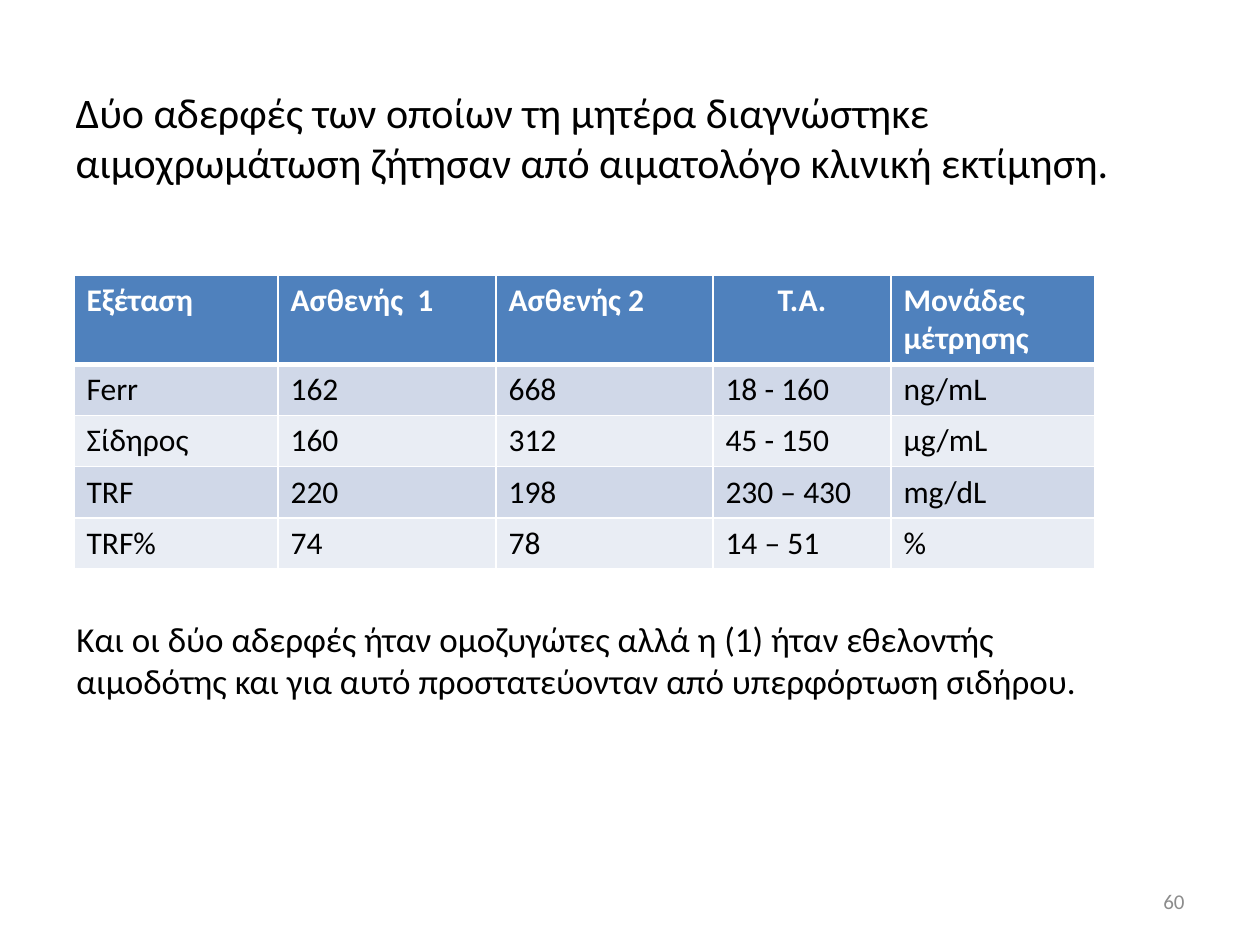
import pptx
import pptx.util
import pptx.dml.color
import pptx.enum.text
import pptx.oxml
import pptx.oxml.ns
from dataclasses import dataclass

TITLE = ("Δύο αδερφές των οποίων τη μητέρα διαγνώστηκε "
         "αιμοχρωμάτωση ζήτησαν από αιματολόγο κλινική εκτίμηση.")
LAB_RESULTS = [
    ("Εξέταση", "Ασθενής  1", "Ασθενής 2", "Τ.Α.", "Μονάδες μέτρησης"),
    ("Ferr", "162", "668", "18 - 160", "ng/mL"),
    ("Σίδηρος", "160", "312", "45 - 150", "μg/mL"),
    ("ΤRF", "220", "198", "230 – 430", "mg/dL"),
    ("TRF%", "74", "78", "14 – 51", "%"),
]
CONCLUSION = ("Και οι δύο αδερφές ήταν ομοζυγώτες αλλά η (1) ήταν εθελοντής "
              "αιμοδότης και για αυτό προστατεύονταν από υπερφόρτωση σιδήρου.")
PAGE_NUMBER = "60"

# Lengths in px
SLIDE_SIZE = (1260, 945)
TITLE_BOX = (63, 38, 1134, 197)
TABLE_ORIGIN = (74, 275)
COLUMN_WIDTHS = (204, 218, 217, 178, 204)
HEADER_HEIGHT, ROW_HEIGHT = 87, 51
CONCLUSION_BOX = (64, 611, 1071, 97)
NUMBER_BOX = (903, 876, 294, 50)
RANGE_COLUMN = 3


@dataclass(frozen=True)
class Theme:
    font: str = "Calibri"
    text: str = "000000"
    white: str = "FFFFFF"
    muted: str = "8C8C8C"
    header: str = "4F81BD"
    bands: tuple = ("D0D8E8", "E9EDF4")
    title_size: int = 24
    body_size: int = 20
    table_size: int = 18
    number_size: int = 12


THEME = Theme()
ALIGN = pptx.enum.text.PP_ALIGN
ANCHOR = pptx.enum.text.MSO_ANCHOR


def px(length):
    return pptx.util.Emu(round(length * 914400 / 126))


def color(value):
    return pptx.dml.color.RGBColor.from_string(value)


def write(frame, text, size, text_color, align=ALIGN.LEFT, bold=False):
    frame.text = text
    frame.word_wrap = True
    paragraph = frame.paragraphs[0]
    paragraph.alignment = align
    font = paragraph.font
    font.name, font.size, font.bold = THEME.font, pptx.util.Pt(size), bold
    font.color.rgb = color(text_color)


def add_text(slide, box, anchor, *style, **options):
    shape = slide.shapes.add_textbox(*map(px, box))
    write(shape.text_frame, *style, **options)
    shape.text_frame.vertical_anchor = anchor


def set_borders(cell, widths):
    """Draw white borders; widths are points for left, right, top, bottom."""
    properties = cell._tc.get_or_add_tcPr()
    for side, width in zip("LRTB", widths):
        properties.append(pptx.oxml.parse_xml(
            f'<a:ln{side} {pptx.oxml.ns.nsdecls("a")} w="{pptx.util.Pt(width)}">'
            f'<a:solidFill><a:srgbClr val="{THEME.white}"/></a:solidFill>'
            f'</a:ln{side}>'))


def add_lab_table(slide):
    heights = [HEADER_HEIGHT] + [ROW_HEIGHT] * (len(LAB_RESULTS) - 1)
    box = (*TABLE_ORIGIN, sum(COLUMN_WIDTHS), sum(heights))
    table = slide.shapes.add_table(
        len(heights), len(COLUMN_WIDTHS), *map(px, box)).table
    for column, width in zip(table.columns, COLUMN_WIDTHS):
        column.width = px(width)
    for r, (values, height) in enumerate(zip(LAB_RESULTS, heights)):
        table.rows[r].height = px(height)
        is_header = r == 0
        fill = THEME.header if is_header else THEME.bands[(r - 1) % 2]
        for c, value in enumerate(values):
            cell = table.cell(r, c)
            centred = is_header and c == RANGE_COLUMN
            write(cell.text_frame, value, THEME.table_size,
                  THEME.white if is_header else THEME.text,
                  align=ALIGN.CENTER if centred else ALIGN.LEFT,
                  bold=is_header)
            set_borders(cell, (1, 1, 3 if r == 1 else 1, 3 if is_header else 1))
            cell.fill.solid()
            cell.fill.fore_color.rgb = color(fill)


def main():
    presentation = pptx.Presentation()
    presentation.slide_width, presentation.slide_height = map(px, SLIDE_SIZE)
    slide = presentation.slides.add_slide(presentation.slide_layouts[5])

    title = slide.shapes.title
    title.left, title.top, title.width, title.height = map(px, TITLE_BOX)
    write(title.text_frame, TITLE, THEME.title_size, THEME.text)
    title.text_frame.vertical_anchor = ANCHOR.MIDDLE

    add_lab_table(slide)
    add_text(slide, CONCLUSION_BOX, ANCHOR.TOP,
             CONCLUSION, THEME.body_size, THEME.text)
    add_text(slide, NUMBER_BOX, ANCHOR.MIDDLE,
             PAGE_NUMBER, THEME.number_size, THEME.muted, align=ALIGN.RIGHT)
    presentation.save("out.pptx")


if __name__ == "__main__":
    main()
